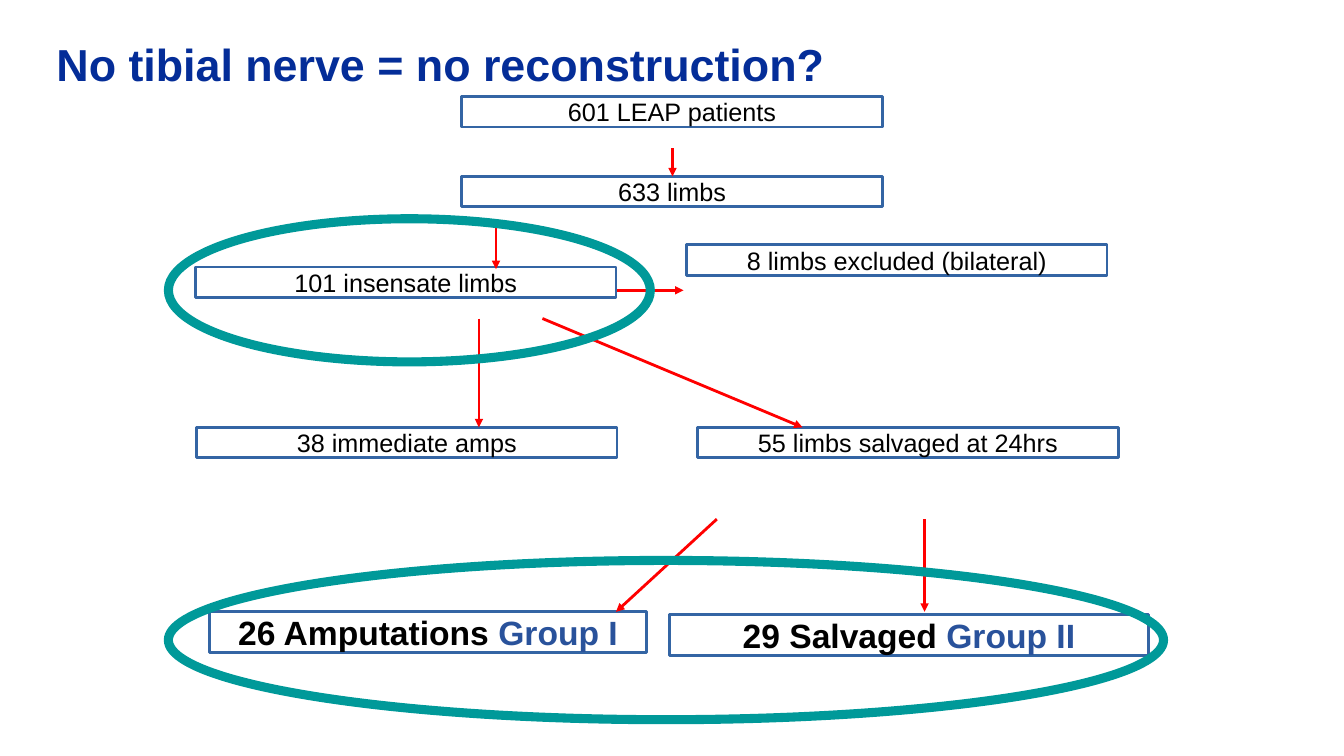
import pptx
import pptx.util
import pptx.dml.color
import pptx.enum.shapes
import pptx.enum.text
import pptx.oxml.ns
import lxml.etree

Inches = pptx.util.Inches
Pt = pptx.util.Pt
RGBColor = pptx.dml.color.RGBColor

NAVY = RGBColor(0x04, 0x2D, 0x98)
BLACK = RGBColor(0, 0, 0)
GROUP_BLUE = RGBColor(0x29, 0x52, 0x9B)
BORDER_BLUE = RGBColor(0x34, 0x65, 0xA4)
RED = RGBColor(0xFF, 0, 0)
TEAL = RGBColor(0, 0x99, 0x99)

BOX_WIDTH = 4.17
BOX_HEIGHT = 0.3
GROUP_HEIGHT = 0.4


class FlowSlide:
    font = "Arial"

    def __init__(self, deck):
        self.page = deck.slides.add_slide(deck.slide_layouts[5])

    def frame(self, box, anchor=pptx.enum.text.MSO_ANCHOR.TOP):
        frame = box.text_frame
        frame.margin_left = frame.margin_right = 0
        frame.margin_top = frame.margin_bottom = 0
        frame.word_wrap = True
        frame.vertical_anchor = anchor
        return frame

    def style(self, span, size, color, bold=False):
        span.font.name = self.font
        span.font.size = Pt(size)
        span.font.bold = bold
        span.font.color.rgb = color

    def title(self, text, left, top, width, height):
        box = self.page.shapes.title
        box.left, box.top = Inches(left), Inches(top)
        box.width, box.height = Inches(width), Inches(height)
        frame = self.frame(box)
        frame.auto_size = pptx.enum.text.MSO_AUTO_SIZE.NONE
        frame.text = text
        para = frame.paragraphs[0]
        para.alignment = pptx.enum.text.PP_ALIGN.LEFT
        para.line_spacing = 0.9
        self.style(para.runs[0], 32, NAVY, True)

    def label(self, left, top, text, group="", width=BOX_WIDTH):
        height = GROUP_HEIGHT if group else BOX_HEIGHT
        size = 24 if group else 18
        box = self.page.shapes.add_textbox(
            Inches(left), Inches(top), Inches(width), Inches(height))
        box.line.color.rgb = BORDER_BLUE
        box.line.width = Pt(2)
        frame = self.frame(box)
        frame.auto_size = pptx.enum.text.MSO_AUTO_SIZE.SHAPE_TO_FIT_TEXT
        para = frame.paragraphs[0]
        para.alignment = pptx.enum.text.PP_ALIGN.CENTER
        for words, color in ((text, BLACK), (group, GROUP_BLUE)):
            if words:
                span = para.add_run()
                span.text = words
                self.style(span, size, color, bool(group))

    def arrow(self, *ends):
        line = self.page.shapes.add_connector(
            pptx.enum.shapes.MSO_CONNECTOR.STRAIGHT, *map(Inches, ends))
        line.line.color.rgb = RED
        line.line.width = Pt(2)
        qn = pptx.oxml.ns.qn
        lxml.etree.SubElement(line.line._get_or_add_ln(), qn("a:tailEnd"), type="triangle")
        lxml.etree.SubElement(line._element.spPr, qn("a:effectLst"))

    def ring(self, *place):
        oval = self.page.shapes.add_shape(
            pptx.enum.shapes.MSO_SHAPE.OVAL, *map(Inches, place))
        oval.shadow.inherit = False
        oval.fill.background()
        oval.line.color.rgb = TEAL
        oval.line.width = Pt(6.5)


def main():
    deck = pptx.Presentation()
    deck.slide_width, deck.slide_height = Inches(13.33), Inches(7.5)
    flow = FlowSlide(deck)
    flow.title("No tibial nerve = no reconstruction?", 0.56, 0.42, 12.07, 1.25)

    for left, top, text in (
        (4.58, 0.96, "601 LEAP patients"),
        (4.58, 1.75, "633 limbs"),
        (1.94, 2.65, "101 insensate limbs"),
        (6.81, 2.43, "8 limbs excluded (bilateral)"),
        (6.92, 4.24, "55 limbs salvaged at 24hrs"),
        (1.95, 4.24, "38 immediate amps"),
    ):
        flow.label(left, top, text)
    flow.label(2.08, 6.07, "26 Amputations ", "Group I", 4.33)
    flow.label(6.64, 6.1, "29 Salvaged ", "Group II", 4.75)

    for ends in (
        (6.67, 1.47, 6.67, 1.75),
        (4.92, 2.25, 4.92, 2.67),
        (6.12, 2.88, 6.78, 2.88),
        (4.75, 3.16, 4.75, 4.24),
        (5.38, 3.16, 7.96, 4.24),
        (9.17, 5.15, 9.17, 6.07),
        (7.11, 5.15, 6.11, 6.07),
    ):
        flow.arrow(*ends)

    flow.ring(1.67, 2.17, 4.78, 1.42)
    flow.ring(1.67, 5.56, 9.87, 1.58)
    deck.save("out.pptx")


if __name__ == "__main__":
    main()
